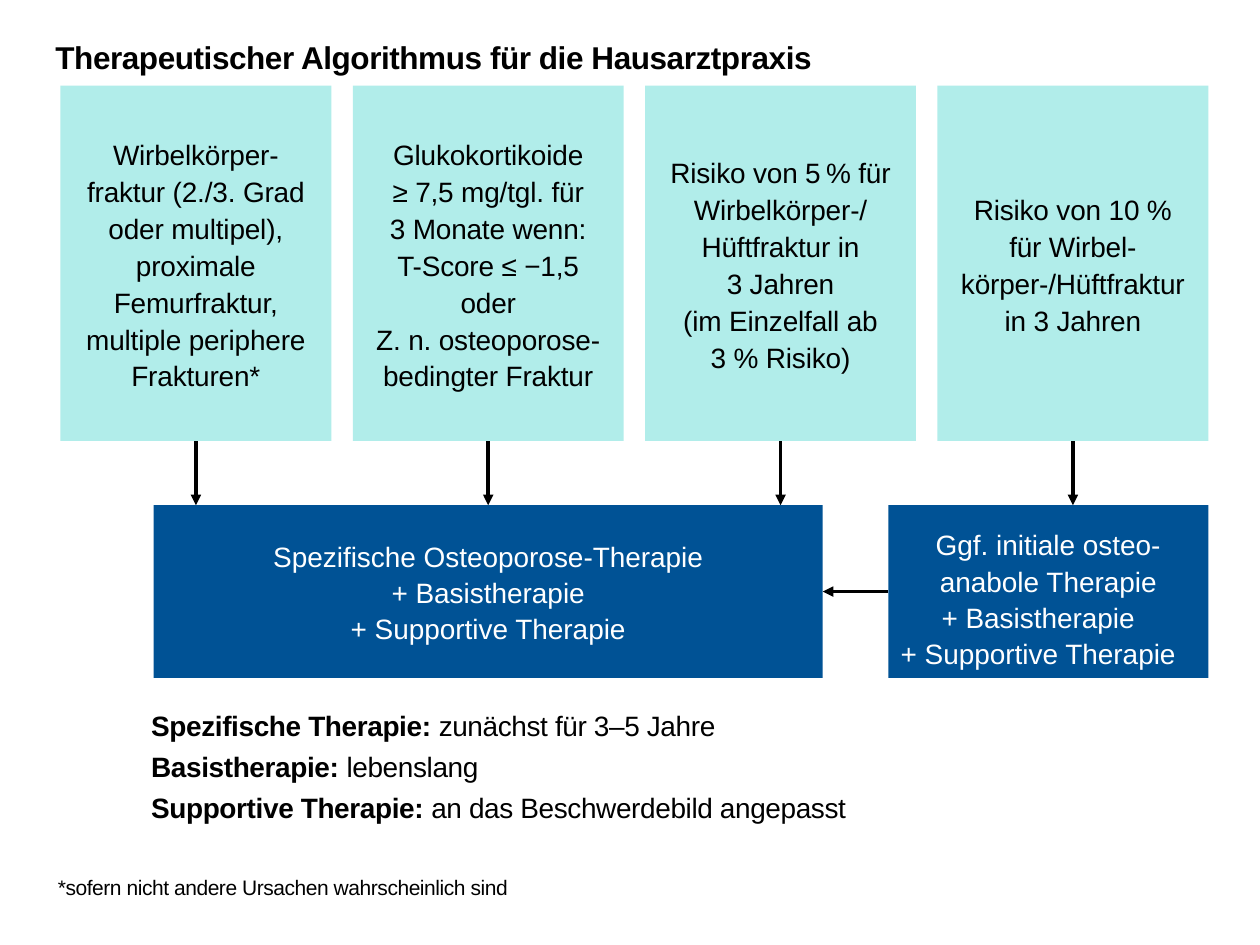
from lxml import etree
from pptx import Presentation
from pptx.dml.color import RGBColor
from pptx.enum.shapes import MSO_CONNECTOR, MSO_SHAPE
from pptx.enum.text import MSO_ANCHOR, PP_ALIGN
from pptx.oxml.ns import qn
from pptx.util import Inches, Pt

RECT = MSO_SHAPE.RECTANGLE
STRAIGHT = MSO_CONNECTOR.STRAIGHT
MIDDLE, TOP = MSO_ANCHOR.MIDDLE, MSO_ANCHOR.TOP
CENTER, LEFT = PP_ALIGN.CENTER, PP_ALIGN.LEFT
BLACK, WHITE, MINT, BLUE = "000000", "FFFFFF", "B1EDEA", "005295"
BOTTOM_SIDE, LEFT_SIDE, RIGHT_SIDE = 2, 1, 3

CARDS = [
    "Wirbelkörper-\vfraktur (2./3. Grad\voder multipel),\vproximale\vFemurfraktur,\v"
    "multiple periphere\vFrakturen*",
    "Glukokortikoide\n≥ 7,5 mg/tgl. für\v3 Monate wenn:\nT-Score ≤ −1,5\voder\n"
    "Z. n. osteoporose-\vbedingter Fraktur",
    "Risiko von 5\u202f% für\vWirbelkörper-/\vHüftfraktur in\n3 Jahren\v"
    "(im Einzelfall ab\n3 % Risiko)",
    "Risiko von 10 %\vfür Wirbel-\vkörper-/Hüftfraktur\vin 3 Jahren",
]
MAIN_THERAPY = "Spezifische Osteoporose-Therapie\n+ Basistherapie\n+ Supportive Therapie"
INITIAL_THERAPY = "Ggf. initiale osteo-\vanabole Therapie\n+ Basistherapie\n+ Supportive Therapie"
DURATIONS = [
    ("Spezifische Therapie: ", "zunächst für 3–5 Jahre"),
    ("Basistherapie: ", "lebenslang"),
    ("Supportive Therapie: ", "an das Beschwerdebild angepasst"),
]


def rgb(color):
    return RGBColor.from_string(color)


def style_run(r, size, color, bold, tracking):
    r.font.name = "Arial"
    r.font.size = Pt(size)
    r.font.bold = bold
    r.font.color.rgb = rgb(color)
    r._r.get_or_add_rPr().set("spc", str(round(tracking * 100)))


def setup_frame(tf, anchor, top=0):
    tf.word_wrap = True
    tf.vertical_anchor = anchor
    tf.margin_left = tf.margin_right = tf.margin_bottom = 0
    tf.margin_top = Inches(top)


def add_box(slide, box, text, fill, color, spacing, tracking, top=0):
    sp = slide.shapes.add_shape(RECT, *map(Inches, box))
    sp.shadow.inherit = False
    sp.fill.solid()
    sp.fill.fore_color.rgb = rgb(fill)
    sp.line.fill.background()
    tf = sp.text_frame
    setup_frame(tf, MIDDLE, top)
    tf.text = text
    for p in tf.paragraphs:
        p.alignment = CENTER
        p.line_spacing = spacing
        for r in p.runs:
            style_run(r, 16, color, False, tracking)
    return sp


def add_label(slide, box, text, size, bold, tracking):
    tf = slide.shapes.add_textbox(*map(Inches, box)).text_frame
    setup_frame(tf, TOP, 0.02)
    tf.text = text
    p = tf.paragraphs[0]
    p.alignment = LEFT
    style_run(p.runs[0], size, BLACK, bold, tracking)


def add_arrow(slide, x1, y1, x2, y2):
    cx = slide.shapes.add_connector(STRAIGHT, *map(Inches, (x1, y1, x2, y2)))
    cx.line.color.rgb = rgb(BLACK)
    cx.line.width = Pt(2)
    etree.SubElement(cx.line._get_or_add_ln(), qn("a:tailEnd"), type="triangle")
    etree.SubElement(cx._element.spPr, qn("a:effectLst"))
    return cx


def add_criteria(slide, left, top, width, height, gap, arrow_end):
    card_width = (width - gap * (len(CARDS) - 1)) / len(CARDS)
    bottom = top + height
    for i, text in enumerate(CARDS):
        x = left + i * (card_width + gap)
        card = add_box(slide, (x, top, card_width, height), text, MINT, BLACK, 1.1, -0.08)
        middle = x + card_width / 2
        arrow = add_arrow(slide, middle, bottom, middle, arrow_end)
        arrow.begin_connect(card, BOTTOM_SIDE)


def add_therapies(slide, left, top, width, height, main_width, initial_width):
    initial_left = left + width - initial_width
    main = add_box(slide, (left, top, main_width, height), MAIN_THERAPY,
                   BLUE, WHITE, 1.07, 0)
    initial = add_box(slide, (initial_left, top, initial_width, height), INITIAL_THERAPY,
                      BLUE, WHITE, 1.08, 0, top=0.1)
    for p in initial.text_frame.paragraphs[1:]:
        p._p.get_or_add_pPr().set("marR", str(Inches(0.16)))
    middle = top + height / 2
    arrow = add_arrow(slide, initial_left, middle, left + main_width, middle)
    arrow.begin_connect(initial, LEFT_SIDE)
    arrow.end_connect(main, RIGHT_SIDE)


def add_durations(slide, box):
    tf = slide.shapes.add_textbox(*map(Inches, box)).text_frame
    setup_frame(tf, TOP, 0.09)
    for i, (term, duration) in enumerate(DURATIONS):
        p = tf.add_paragraph() if i else tf.paragraphs[0]
        p.alignment = LEFT
        if i:
            p.space_before = Pt(4.4)
        for text, bold in ((term, True), (duration, False)):
            r = p.add_run()
            r.text = text
            style_run(r, 16, BLACK, bold, -0.2)


def main():
    prs = Presentation()
    prs.slide_width, prs.slide_height = Inches(10), Inches(7.5)
    slide = prs.slides.add_slide(prs.slide_layouts[6])
    add_label(slide, (0.44, 0.28, 8.38, 0.32),
              "Therapeutischer Algorithmus für die Hausarztpraxis", 18, True, -0.25)
    add_criteria(slide, 0.48, 0.68, 9.11, 2.82, 0.17, 4.01)
    add_therapies(slide, 1.22, 4.01, 8.37, 1.37, 5.31, 2.54)
    add_durations(slide, (1.2, 5.53, 5.83, 0.99))
    add_label(slide, (0.46, 6.92, 5.23, 0.22),
              "*sofern nicht andere Ursachen wahrscheinlich sind", 12, False, -0.25)
    prs.save("out.pptx")


if __name__ == "__main__":
    main()
